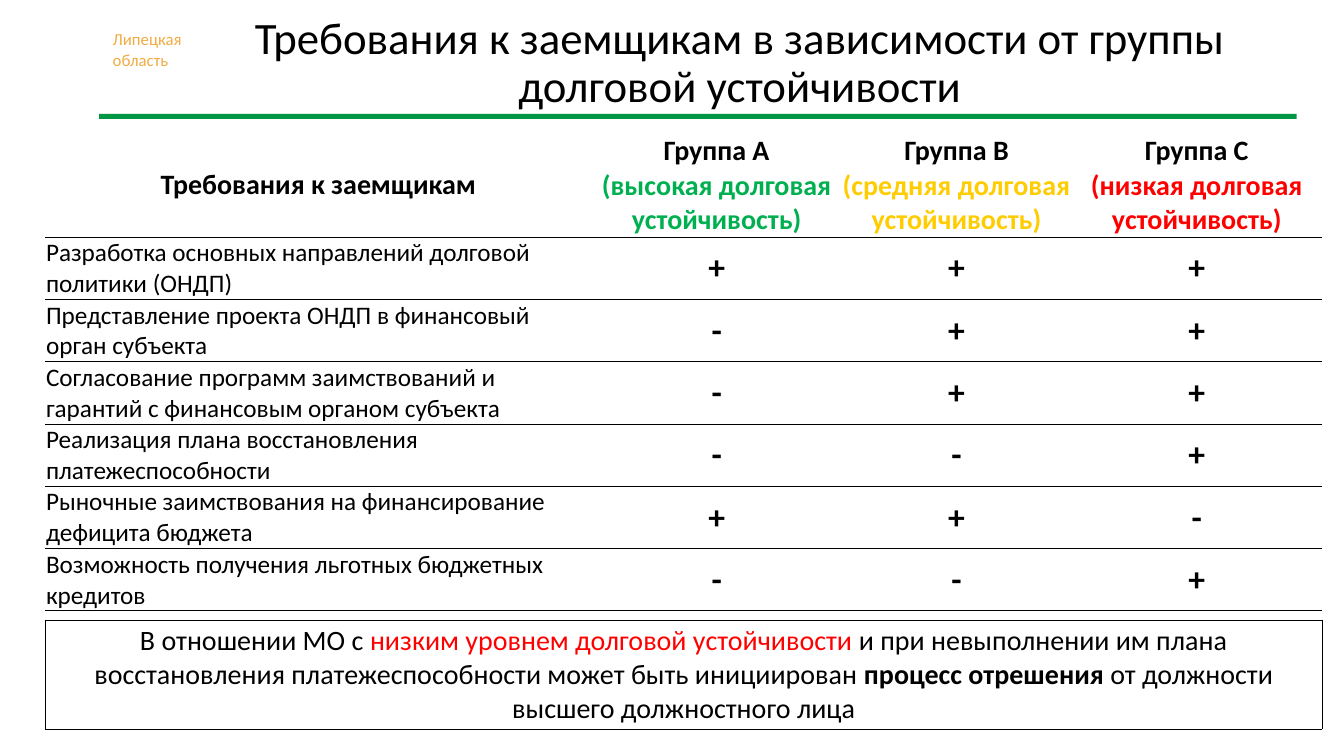
from lxml.etree import SubElement
from pptx import Presentation
from pptx.dml.color import RGBColor
from pptx.enum.shapes import MSO_SHAPE
from pptx.enum.text import MSO_ANCHOR, MSO_AUTO_SIZE, PP_ALIGN
from pptx.oxml.ns import qn
from pptx.util import Cm, Pt

# Content
TITLE = "Требования к заемщикам в зависимости от группы долговой устойчивости"
REGION = ["Липецкая", "область"]
CORNER = "Требования к заемщикам"
GROUPS = [
    ("Группа А", "(высокая долговая устойчивость)", "00B050"),
    ("Группа В", "(средняя долговая устойчивость)", "FFCC00"),
    ("Группа С", "(низкая долговая устойчивость)", "FF0000"),
]
REQUIREMENTS = [
    ("Разработка основных направлений долговой политики (ОНДП)", "+++"),
    ("Представление проекта ОНДП в финансовый орган субъекта", "-++"),
    ("Согласование программ заимствований и гарантий с финансовым органом субъекта", "-++"),
    ("Реализация плана восстановления платежеспособности", "--+"),
    ("Рыночные заимствования на финансирование дефицита бюджета", "++-"),
    ("Возможность получения льготных бюджетных кредитов", "--+"),
]
# Text, colour, bold
NOTE = [
    ("В отношении МО с ", "000000", False),
    ("низким уровнем долговой устойчивости", "FF0000", False),
    (" и при невыполнении им плана восстановления платежеспособности "
     "может быть инициирован ", "000000", False),
    ("процесс отрешения", "000000", True),
    (" от должности высшего должностного лица", "000000", False),
]
COL_WIDTHS = [13.77, 6.3, 5.79, 6.32]
ROW_HEIGHTS = [0.88, 1.74] + [1.57] * len(REQUIREMENTS) + [0.23, 2.75]
FONT = "Calibri"
NO_STYLE = "{2D5ABB26-0587-4C30-8999-92F81FD0307C}"


def color(hex_string):
    return RGBColor.from_string(hex_string)


def style_run(r, size, hex_string="000000", bold=False):
    r.font.name, r.font.size, r.font.bold = FONT, Pt(size), bold
    r.font.color.rgb = color(hex_string)


def set_borders(cell, sides):
    tc_pr = cell._tc.get_or_add_tcPr()
    for side in "LRTB":
        ln = SubElement(tc_pr, qn(f"a:ln{side}"), w=str(Pt(0.5)))
        if side in sides:
            fill = SubElement(ln, qn("a:solidFill"))
            SubElement(fill, qn("a:srgbClr"), val="000000")
        else:
            SubElement(ln, qn("a:noFill"))
    cell.fill.background()


def fill_cell(cell, parts, size, align=PP_ALIGN.CENTER, anchor=MSO_ANCHOR.MIDDLE):
    cell.vertical_anchor = anchor
    p = cell.text_frame.paragraphs[0]
    p.alignment = align
    for text, hex_string, bold in parts:
        r = p.add_run()
        r.text = text
        style_run(r, size, hex_string, bold)


prs = Presentation()
prs.slide_width, prs.slide_height = Cm(33.87), Cm(19.05)
s = prs.slides.add_slide(prs.slide_layouts[5])

# Region label
sp = s.shapes.add_textbox(Cm(2.59), Cm(0.61), Cm(2.31), Cm(1.27))
tf = sp.text_frame
tf.word_wrap = True
tf.text = "\n".join(REGION)
for p in tf.paragraphs:
    style_run(p.runs[0], 12, "F2AC44")

# Title and the rule under it
title = s.shapes.title
title.left, title.top, title.width, title.height = Cm(4.39), Cm(0.43), Cm(28.52), Cm(2.36)
tf = title.text_frame
tf.text = TITLE
tf.word_wrap = True
tf.auto_size = MSO_AUTO_SIZE.NONE
tf.vertical_anchor = MSO_ANCHOR.MIDDLE
p = tf.paragraphs[0]
p.alignment, p.line_spacing = PP_ALIGN.CENTER, 0.9
style_run(p.runs[0], 32)

rule = s.shapes.add_shape(MSO_SHAPE.RECTANGLE, Cm(2.5), Cm(2.87), Cm(30.18), Cm(0.13))
rule.shadow.inherit = False
rule.fill.solid()
rule.fill.fore_color.rgb = color("009644")
rule.line.fill.background()

# Table grid
n_rows, n_cols = len(ROW_HEIGHTS), len(COL_WIDTHS)
spacer, note = n_rows - 2, n_rows - 1
frame = s.shapes.add_table(n_rows, n_cols, Cm(1.14), Cm(3.35),
                           Cm(sum(COL_WIDTHS)), Cm(sum(ROW_HEIGHTS)))
table = frame.table
table.first_row = table.horz_banding = False
table._tbl.tblPr.find(qn("a:tableStyleId")).text = NO_STYLE
for column, width in zip(table.columns, COL_WIDTHS):
    column.width = Cm(width)
for row, height in zip(table.rows, ROW_HEIGHTS):
    row.height = Cm(height)

for i in range(n_rows):
    sides = {0: "", 1: "B", spacer: "TB", note: "LRTB"}.get(i, "TB")
    for j in range(n_cols):
        cell = table.cell(i, j)
        cell.margin_left = cell.margin_right = cell.margin_top = Cm(0.02)
        cell.margin_bottom = 0
        set_borders(cell, "B" if (i, j) == (0, 0) else sides)
        if i == spacer:
            p = cell.text_frame.paragraphs[0]
            SubElement(p._p, qn("a:endParaRPr"), sz="400")

# Header
table.cell(0, 0).merge(table.cell(1, 0))
fill_cell(table.cell(0, 0), [(CORNER, "000000", True)], 20)
for j, (name, level, hex_string) in enumerate(GROUPS, 1):
    fill_cell(table.cell(0, j), [(name, "000000", True)], 20, anchor=MSO_ANCHOR.BOTTOM)
    fill_cell(table.cell(1, j), [(level, hex_string, True)], 20, anchor=MSO_ANCHOR.BOTTOM)

# Requirements
for i, (requirement, marks) in enumerate(REQUIREMENTS, 2):
    fill_cell(table.cell(i, 0), [(requirement, "000000", False)], 18,
              PP_ALIGN.LEFT, MSO_ANCHOR.BOTTOM)
    for j, mark in enumerate(marks, 1):
        fill_cell(table.cell(i, j), [(mark, "000000", True)], 24)

# Boxed note
table.cell(note, 0).merge(table.cell(note, n_cols - 1))
fill_cell(table.cell(note, 0), NOTE, 20)

prs.save("out.pptx")
